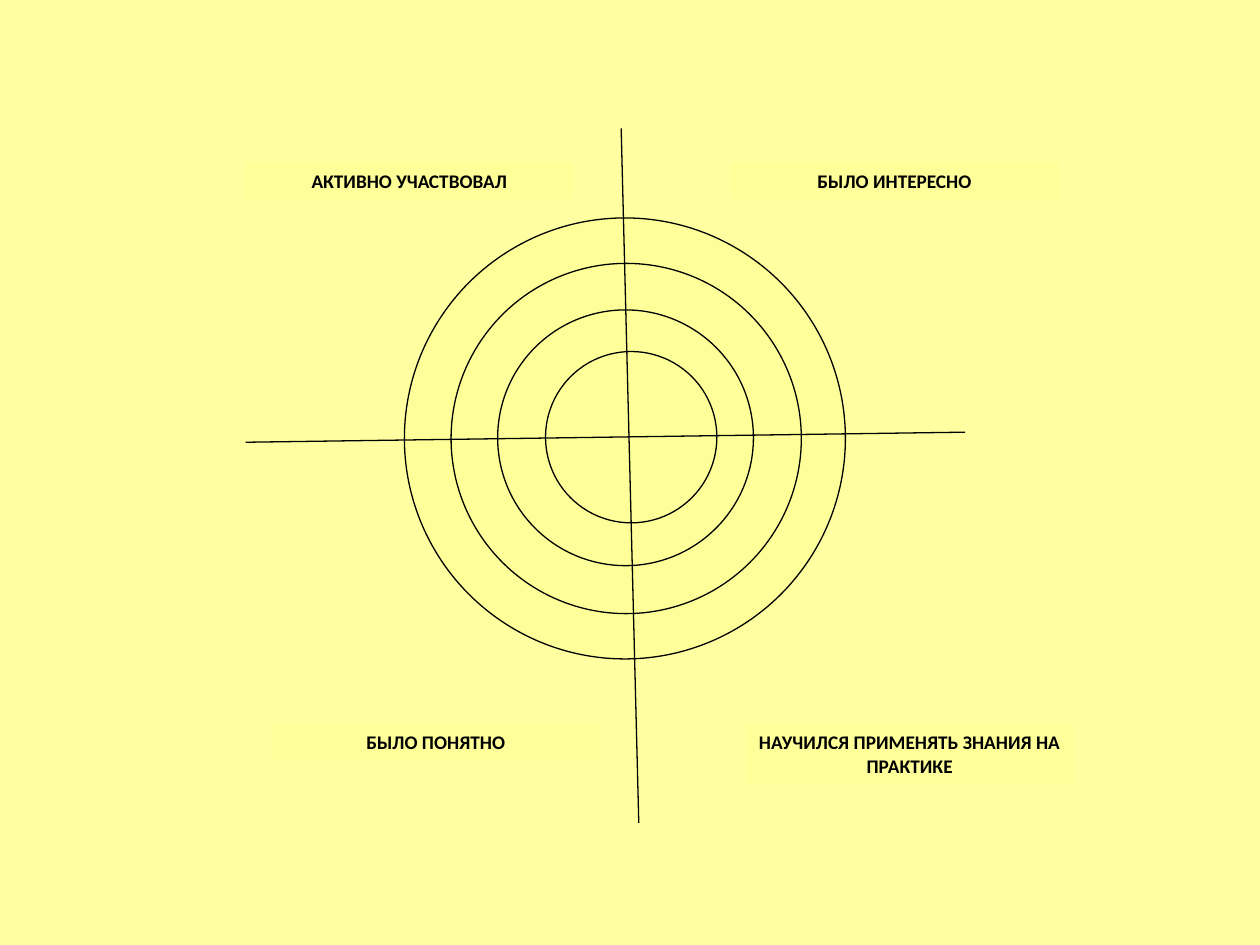
import pptx
import pptx.util
import pptx.dml.color
import pptx.enum.shapes
import pptx.enum.text
import lxml.etree
from pptx.util import Inches

PAPER = pptx.dml.color.RGBColor(0xFF, 0xFF, 0xA1)
CREAM = pptx.dml.color.RGBColor(0xFF, 0xFF, 0x99)
BLACK = pptx.dml.color.RGBColor(0, 0, 0)
KIND = pptx.enum.shapes.MSO_SHAPE

deck = pptx.Presentation()
deck.slide_width, deck.slide_height = Inches(10), Inches(7.5)
slide = deck.slides.add_slide(deck.slide_layouts[6])
slide.background.fill.solid()
slide.background.fill.fore_color.rgb = PAPER
target = slide.shapes.add_group_shape()


def add_panel(kind, left, top, width, height):
    """Add a cream shape without a shadow to the target."""
    panel = target.shapes.add_shape(
        kind, Inches(left), Inches(top), Inches(width), Inches(height))
    panel.shadow.inherit = False
    panel.fill.solid()
    panel.fill.fore_color.rgb = CREAM
    return panel


# Rings, from the outermost in
for left, top, size in [(3.21, 1.73, 3.5), (3.58, 2.09, 2.78),
                        (3.95, 2.46, 2.03), (4.33, 2.79, 1.36)]:
    ring = add_panel(KIND.OVAL, left, top, size, size)
    ring.line.color.rgb = BLACK
    ring.line.width = pptx.util.Pt(0.75)

# Axes
for ends in [(1.95, 3.51, 7.66, 3.43), (4.93, 1.02, 5.07, 6.53)]:
    axis = target.shapes.add_connector(
        pptx.enum.shapes.MSO_CONNECTOR.STRAIGHT, *map(Inches, ends))
    axis.line.color.rgb = BLACK
    axis.line.width = pptx.util.Pt(0.75)
    lxml.etree.SubElement(axis._element.spPr, pptx.oxml.ns.qn("a:effectLst"))

# Quarter labels
for left, top, height, text in [
        (1.95, 1.29, 0.29, "АКТИВНО УЧАСТВОВАЛ"),
        (2.16, 5.75, 0.29, "БЫЛО ПОНЯТНО"),
        (5.8, 1.29, 0.29, "БЫЛО ИНТЕРЕСНО"),
        (5.92, 5.75, 0.48, "НАУЧИЛСЯ ПРИМЕНЯТЬ ЗНАНИЯ НА ПРАКТИКЕ")]:
    label = add_panel(KIND.RECTANGLE, left, top, 2.6, height)
    label.line.fill.background()
    frame = label.text_frame
    frame.word_wrap = True
    frame.auto_size = pptx.enum.text.MSO_AUTO_SIZE.SHAPE_TO_FIT_TEXT
    frame.vertical_anchor = pptx.enum.text.MSO_ANCHOR.TOP
    line = frame.paragraphs[0]
    line.text = text
    line.alignment = pptx.enum.text.PP_ALIGN.CENTER
    line.space_after = pptx.util.Pt(10)
    line.font.name = "Calibri"
    line.font.size = pptx.util.Pt(11)
    line.font.bold = True
    line.font.color.rgb = BLACK

deck.save("out.pptx")
